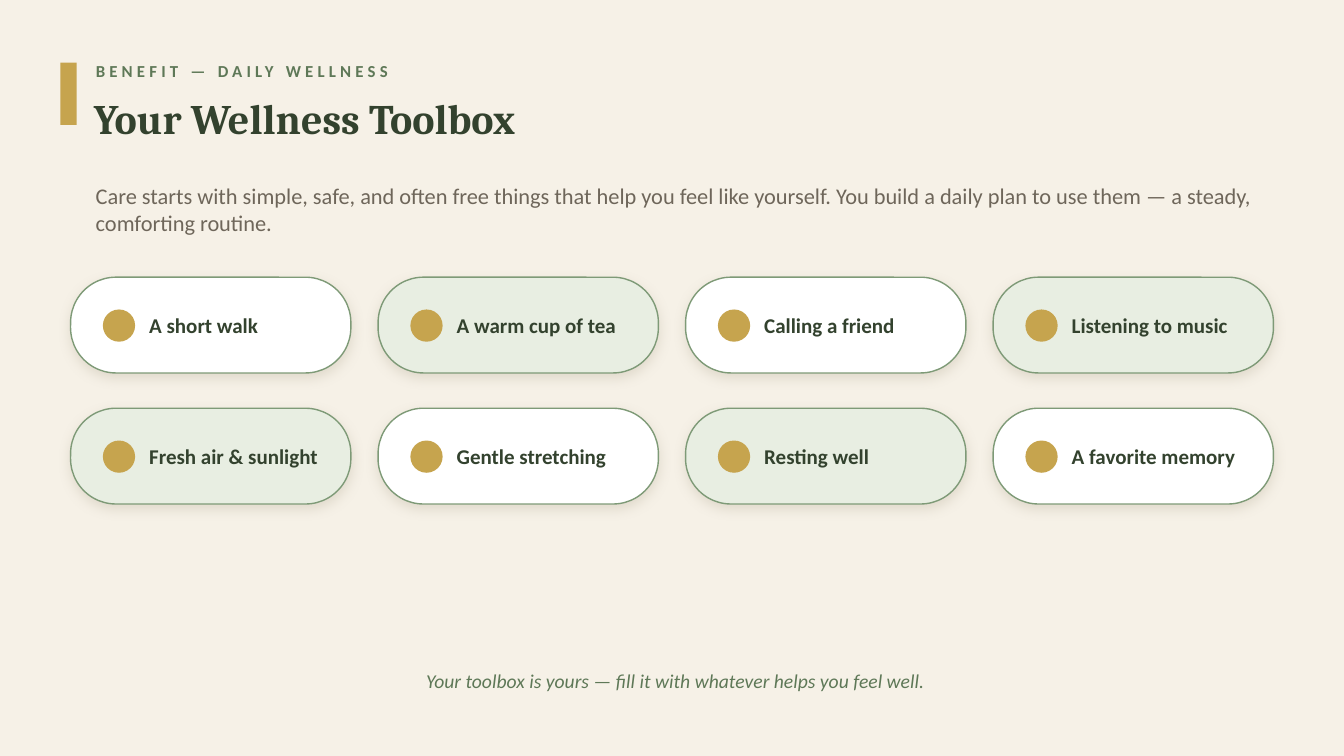
import dataclasses

import pptx
import pptx.dml.color
import pptx.enum.shapes
import pptx.enum.text
import pptx.oxml
import pptx.oxml.ns
import pptx.util

SHAPE = pptx.enum.shapes.MSO_SHAPE
ALIGN = pptx.enum.text.PP_ALIGN
PX = 9144


@dataclasses.dataclass(frozen=True)
class Theme:
    """Colours and type styles of the slide."""
    paper: str = "F6F1E7"
    gold: str = "C6A44E"
    white: str = "FFFFFF"
    mint: str = "E8EEE2"
    sage: str = "7E9A77"
    shade: str = "B9B09B"
    moss: str = "5E7857"
    forest: str = "33422E"
    stone: str = "6E665A"

    def style(self, role):
        """Return the colour and the font values of a text role."""
        return {
            "kicker": (self.moss, {"name": "Calibri", "size": 12, "bold": True}),
            "title": (self.forest, {"name": "Cambria", "size": 30, "bold": True}),
            "intro": (self.stone, {"name": "Calibri", "size": 16}),
            "tool": (self.forest, {"name": "Calibri", "size": 15, "bold": True}),
            "closing": (self.moss, {"name": "Calibri", "size": 14, "italic": True}),
        }[role]


THEME = Theme()

TOOLS = [
    ["A short walk", "A warm cup of tea", "Calling a friend", "Listening to music"],
    ["Fresh air & sunlight", "Gentle stretching", "Resting well", "A favorite memory"],
]


def scaled(box):
    """Turn a left, top, width, height box in px into EMU."""
    return [pptx.util.Emu(length * PX) for length in box]


def colour(value):
    """Return the RGB colour of a hex value."""
    return pptx.dml.color.RGBColor.from_string(value)


def write(shape, text, role, align=ALIGN.LEFT, spacing=0):
    """Fill a text shape with one styled paragraph."""
    frame = shape.text_frame
    frame_format = {
        "word_wrap": True,
        "auto_size": pptx.enum.text.MSO_AUTO_SIZE.NONE,
        "vertical_anchor": pptx.enum.text.MSO_ANCHOR.MIDDLE,
        "margin_left": 0, "margin_top": 0, "margin_right": 0, "margin_bottom": 0,
    }
    for name, value in frame_format.items():
        setattr(frame, name, value)
    para = frame.paragraphs[0]
    para.alignment = align
    span = para.add_run()
    span.text = text
    ink, font_format = THEME.style(role)
    for name, value in font_format.items():
        setattr(span.font, name, pptx.util.Pt(value) if name == "size" else value)
    span.font.color.rgb = colour(ink)
    if spacing:
        span.font._element.set("spc", str(spacing * 100))


def add_text(page, box, text, role, **options):
    """Add a text box in the given role."""
    write(page.shapes.add_textbox(*scaled(box)), text, role, **options)


def add_block(page, kind, box, fill):
    """Add a flat filled shape with no outline."""
    shape = page.shapes.add_shape(kind, *scaled(box))
    shape.shadow.inherit = False
    shape.fill.solid()
    shape.fill.fore_color.rgb = colour(fill)
    shape.line.fill.background()
    return shape


def add_soft_shadow(shape):
    """Give a shape a soft shadow that falls straight down."""
    effects = shape.element.spPr.find(pptx.oxml.ns.qn("a:effectLst"))
    effects.append(pptx.oxml.parse_xml(
        f'<a:outerShdw {pptx.oxml.ns.nsdecls("a")} blurRad="{pptx.util.Pt(9)}" '
        f'dist="{pptx.util.Pt(3)}" dir="5400000" algn="ctr" rotWithShape="0">'
        f'<a:srgbClr val="{THEME.shade}"><a:alpha val="35000"/></a:srgbClr>'
        '</a:outerShdw>'))


def add_header(page, box):
    """Place the accent bar, kicker and title in the header box."""
    left, top, width, height = box
    add_block(page, SHAPE.RECTANGLE, (left, top + 7, 16, 62), THEME.gold)
    add_text(page, (left + 35, top, width - 35, 30),
             "BENEFIT — DAILY WELLNESS", "kicker", spacing=3)
    title = page.shapes.title
    title.left, title.top, title.width, title.height = scaled(
        (left + 33, top + 27, width - 33, height - 27))
    write(title, "Your Wellness Toolbox", "title")


def add_tool(page, box, name, fill):
    """Place one pill with its dot and label."""
    left, top, width, height = box
    dot = 32
    pill = add_block(page, SHAPE.ROUNDED_RECTANGLE, box, fill)
    pill.adjustments[0] = 0.474
    pill.line.color.rgb = colour(THEME.sage)
    pill.line.width = pptx.util.Pt(1)
    add_soft_shadow(pill)
    add_block(page, SHAPE.OVAL, (left + 32, top + (height - dot + 1) // 2, dot, dot),
              THEME.gold)
    add_text(page, (left + 78, top, width - 95, height), name, "tool")


def add_toolbox(page, box):
    """Lay the tools out as a grid of alternating pills."""
    left, top, width, height = box
    pill_width, pill_height = 278, 95
    step_x = (width - pill_width) // (len(TOOLS[0]) - 1)
    step_y = (height - pill_height) // (len(TOOLS) - 1)
    for row, names in enumerate(TOOLS):
        for column, name in enumerate(names):
            fill = THEME.mint if (row + column) % 2 else THEME.white
            add_tool(page, (left + column * step_x, top + row * step_y,
                            pill_width, pill_height), name, fill)


def build_toolbox_page(deck):
    """Build the wellness toolbox slide."""
    page = deck.slides.add_slide(deck.slide_layouts.get_by_name("Title Only"))
    page.background.fill.solid()
    page.background.fill.fore_color.rgb = colour(THEME.paper)
    add_header(page, (60, 55, 1193, 97))
    add_text(page, (95, 165, 1150, 85),
             "Care starts with simple, safe, and often free things that help you "
             "feel like yourself. You build a daily plan to use them — a steady, "
             "comforting routine.", "intro")
    add_toolbox(page, (70, 275, 1193, 225))
    add_text(page, (95, 655, 1150, 40),
             "Your toolbox is yours — fill it with whatever helps you feel well.",
             "closing", align=ALIGN.CENTER)


def main():
    """Create the deck and save it."""
    deck = pptx.Presentation()
    deck.slide_width, deck.slide_height = scaled((1333, 750))
    build_toolbox_page(deck)
    deck.save("out.pptx")


if __name__ == "__main__":
    main()
